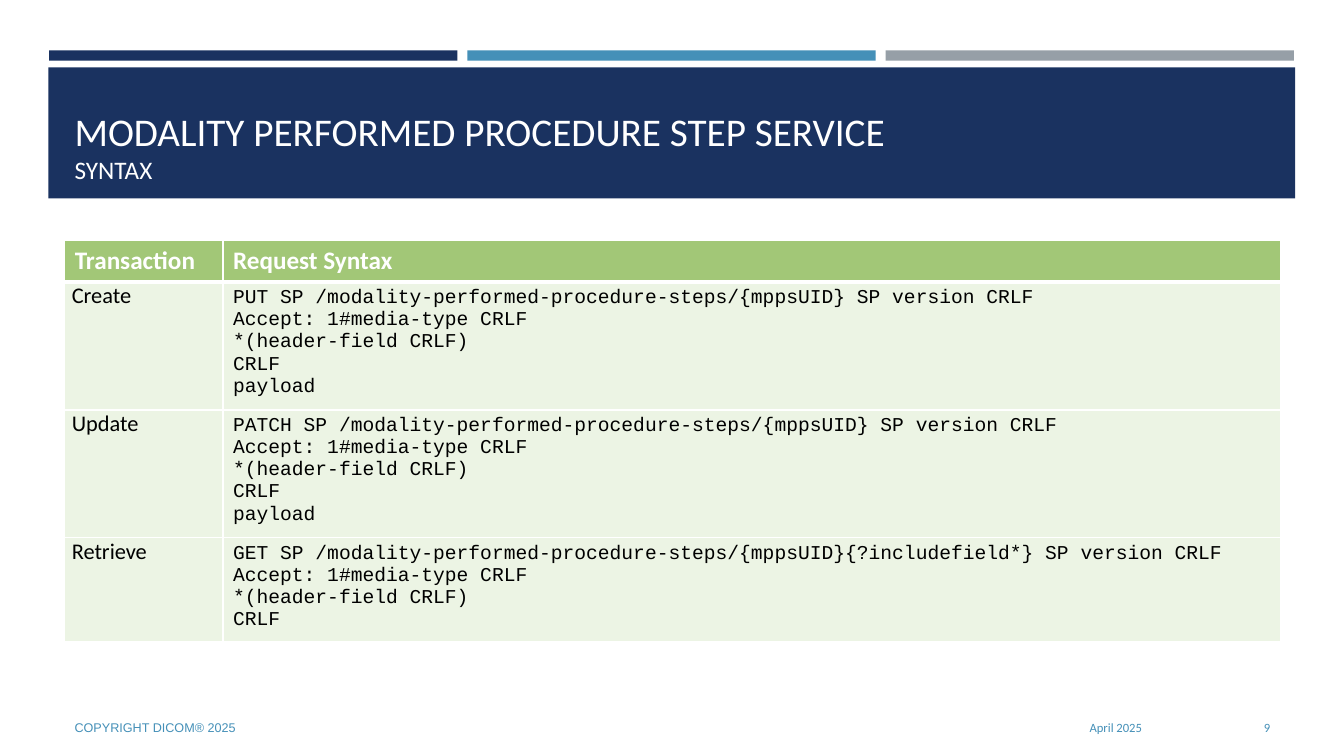
from lxml.etree import SubElement
from pptx import Presentation
from pptx.dml.color import RGBColor
from pptx.enum.shapes import MSO_SHAPE
from pptx.enum.text import MSO_ANCHOR, PP_ALIGN
from pptx.oxml.ns import qn
from pptx.util import Cm, Pt

COLORS = {
    "navy": "1A3260",
    "blue": "4590B8",
    "gray": "969FA7",
    "green": "A2C777",
    "pale_green": "ECF4E4",
    "white": "FFFFFF",
    "black": "000000",
}
HEADERS = ["Transaction", "Request Syntax"]
COMMON_LINES = ["Accept: 1#media-type CRLF", "*(header-field CRLF)", "CRLF"]
REQUESTS = [
    ("Create", ["PUT SP /modality-performed-procedure-steps/{mppsUID} SP version CRLF",
                *COMMON_LINES, "payload"]),
    ("Update", ["PATCH SP /modality-performed-procedure-steps/{mppsUID} SP version CRLF",
                *COMMON_LINES, "payload"]),
    ("Retrieve", ["GET SP /modality-performed-procedure-steps/{mppsUID}{?includefield*} SP version CRLF",
                  *COMMON_LINES]),
]
COLUMN_WIDTHS = [3.99, 26.64]
ROW_HEIGHTS = [1.04, 3.05, 3.05, 2.5]
LEFT = 1.63
CONTENT_WIDTH = 30.63


def color(name):
    """Return the named palette colour."""
    return RGBColor.from_string(COLORS[name])


def add_run(paragraph, text, size=9, font="Calibri", fill="black", bold=False):
    """Append a formatted run to a paragraph."""
    run = paragraph.add_run()
    run.text = text
    run.font.size = Pt(size)
    run.font.name = font
    run.font.bold = bold
    run.font.color.rgb = color(fill)


def add_bar(slide, left, top, width, height, fill):
    """Draw a plain filled rectangle."""
    shape = slide.shapes.add_shape(
        MSO_SHAPE.RECTANGLE, Cm(left), Cm(top), Cm(width), Cm(height))
    shape.shadow.inherit = False
    shape.fill.solid()
    shape.fill.fore_color.rgb = color(fill)
    shape.line.fill.background()


def add_text_box(slide, left, top, width, height, anchor=MSO_ANCHOR.MIDDLE,
                 align=PP_ALIGN.LEFT):
    """Add a wrapping text box and return its first paragraph."""
    frame = slide.shapes.add_textbox(
        Cm(left), Cm(top), Cm(width), Cm(height)).text_frame
    frame.word_wrap = True
    frame.vertical_anchor = anchor
    paragraph = frame.paragraphs[0]
    paragraph.alignment = align
    return paragraph


def add_title(slide):
    """Add the two-line slide title."""
    paragraph = add_text_box(slide, LEFT, 1.96, CONTENT_WIDTH, 2.82, MSO_ANCHOR.BOTTOM)
    add_run(paragraph, "MODALITY PERFORMED PROCEDURE STEP SERVICE", size=28, fill="white")
    paragraph.add_line_break()
    add_run(paragraph, "SYNTAX", size=18, fill="white")


def set_borders(cell, top=1, bottom=1):
    """Give a cell white borders with the given widths in points."""
    properties = cell._tc.get_or_add_tcPr()
    for side, width in {"L": 1, "R": 1, "T": top, "B": bottom}.items():
        line = SubElement(properties, qn(f"a:ln{side}"), w=str(Pt(width)))
        fill = SubElement(line, qn("a:solidFill"))
        SubElement(fill, qn("a:srgbClr"), val=COLORS["white"])


def fill_cell(cell, lines, background, top=1, bottom=1, **text_format):
    """Style a cell and write one paragraph per line."""
    set_borders(cell, top, bottom)
    cell.fill.solid()
    cell.fill.fore_color.rgb = color(background)
    frame = cell.text_frame
    for index, line in enumerate(lines):
        paragraph = frame.add_paragraph() if index else frame.paragraphs[0]
        add_run(paragraph, line, **text_format)


def add_syntax_table(slide):
    """Add the table of transactions and their request syntax."""
    table = slide.shapes.add_table(
        len(ROW_HEIGHTS), len(COLUMN_WIDTHS), Cm(LEFT), Cm(6.07),
        Cm(CONTENT_WIDTH), Cm(sum(ROW_HEIGHTS))).table
    for column, width in zip(table.columns, COLUMN_WIDTHS):
        column.width = Cm(width)
    for row, height in zip(table.rows, ROW_HEIGHTS):
        row.height = Cm(height)
    for index, header in enumerate(HEADERS):
        fill_cell(table.cell(0, index), [header], "green", bottom=3,
                  size=18, fill="white", bold=True)
    for index, (transaction, syntax) in enumerate(REQUESTS, start=1):
        top = 3 if index == 1 else 1
        name_cell = table.cell(index, 0)
        name_cell.margin_left = name_cell.margin_right = Cm(0.18)
        name_cell.margin_top = name_cell.margin_bottom = Cm(0)
        fill_cell(name_cell, [transaction], "pale_green", top=top, size=16)
        fill_cell(table.cell(index, 1), syntax, "pale_green", top=top,
                  size=14, font="Courier New")


def add_footer(slide, text, left, width, align=PP_ALIGN.RIGHT, font="Calibri"):
    """Add one footer entry."""
    paragraph = add_text_box(slide, left, 17.83, width, 1.02, align=align)
    add_run(paragraph, text, font=font, fill="blue")


def main():
    """Build and save the slide."""
    presentation = Presentation()
    presentation.slide_width = Cm(33.87)
    presentation.slide_height = Cm(19.05)
    slide = presentation.slides.add_slide(presentation.slide_layouts[6])
    for index, fill in enumerate(["navy", "blue", "gray"]):
        add_bar(slide, 1.24 + 10.54 * index, 1.27, 10.29, 0.26, fill)
    add_bar(slide, 1.22, 1.7, 31.42, 3.3, "navy")
    add_title(slide)
    add_syntax_table(slide)
    add_footer(slide, "COPYRIGHT DICOM® 2025", LEFT, 19.2, PP_ALIGN.LEFT, "Arial")
    add_footer(slide, "April 2025", 21.13, 7.9)
    add_footer(slide, "9", 29.34, 2.92)
    presentation.save("out.pptx")


if __name__ == "__main__":
    main()
